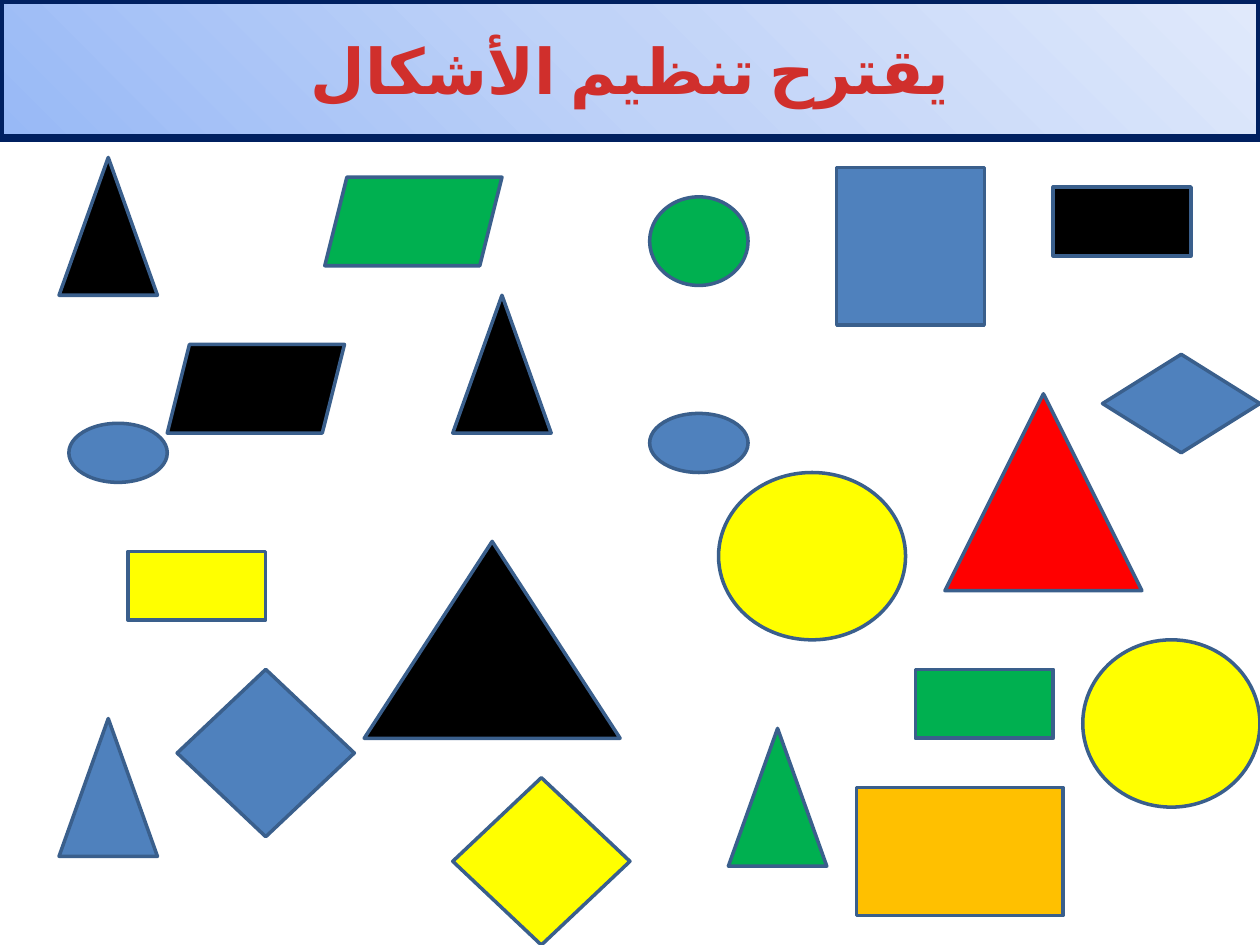
from copy import deepcopy

from lxml import etree
from pptx import Presentation
from pptx.dml.color import RGBColor
from pptx.enum.shapes import MSO_SHAPE
from pptx.enum.text import MSO_ANCHOR, MSO_AUTO_SIZE, PP_ALIGN
from pptx.oxml.ns import qn
from pptx.util import Pt

RECTANGLE = MSO_SHAPE.RECTANGLE
TRIANGLE = MSO_SHAPE.ISOSCELES_TRIANGLE
OVAL = MSO_SHAPE.FLOWCHART_CONNECTOR
DIAMOND = MSO_SHAPE.FLOWCHART_DECISION
PARALLELOGRAM = MSO_SHAPE.PARALLELOGRAM

COLORS = {
    "black": "000000", "blue": "4F81BD", "orange": "FFC000",
    "yellow": "FFFF00", "green": "00B050", "red": "FF0000",
    "outline": "3A5F8C", "navy": "002060", "title": "D02F2C",
    "banner start": "98B9F6", "banner middle": "C0D3F8", "banner end": "E0E9FB",
}

# Content: left, top, width, height in grid units
TITLE = "يقترح تنظيم الأشكال"
FIGURES = {
    RECTANGLE: [
        ("black", 107, 19, 14, 7), ("blue", 85, 17, 15, 16),
        ("orange", 87, 80, 21, 13), ("yellow", 13, 56, 14, 7),
        ("green", 93, 68, 14, 7),
    ],
    TRIANGLE: [
        ("black", 37, 55, 26, 20), ("red", 96, 40, 20, 20),
        ("black", 46, 30, 10, 14), ("black", 6, 16, 10, 14),
        ("green", 74, 74, 10, 14), ("blue", 6, 73, 10, 14),
    ],
    OVAL: [
        ("blue", 66, 42, 10, 6), ("green", 66, 20, 10, 9),
        ("blue", 7, 43, 10, 6), ("yellow", 110, 65, 18, 17),
        ("yellow", 73, 48, 19, 17),
    ],
    DIAMOND: [
        ("blue", 18, 68, 18, 17), ("yellow", 46, 79, 18, 17),
        ("blue", 112, 36, 16, 10),
    ],
    PARALLELOGRAM: [("green", 33, 18, 18, 9), ("black", 17, 35, 18, 9)],
}

SLIDE_W, SLIDE_H = 720, 540
GRID = SLIDE_W / 128
TITLE_BOX = (0, 0, 128, 14)
BANNER_STOPS = [("banner start", 0), ("banner middle", 0.5), ("banner end", 1)]
FRAME_FORMAT = {
    "word_wrap": True, "auto_size": MSO_AUTO_SIZE.NONE,
    "vertical_anchor": MSO_ANCHOR.MIDDLE,
}
FONT_FORMAT = {"name": "Calibri", "size": Pt(36), "bold": True}


def rgb(name):
    return RGBColor.from_string(COLORS[name])


def on_grid(box):
    return [Pt(units * GRID) for units in box]


def set_format(target, values):
    for attribute, value in values.items():
        setattr(target, attribute, value)


def set_outline(shape, color, width):
    shape.line.color.rgb = rgb(color)
    shape.line.width = Pt(width)


prs = Presentation()
prs.slide_width, prs.slide_height = Pt(SLIDE_W), Pt(SLIDE_H)
slide = prs.slides.add_slide(prs.slide_layouts[5])

# Title banner
title = slide.shapes.title
set_format(title, dict(zip(("left", "top", "width", "height"), on_grid(TITLE_BOX))))
title.fill.gradient()
title.fill.gradient_angle = 45
stop_list = next(title.element.iter(qn("a:gsLst")))
stop_list.insert(1, deepcopy(stop_list[0]))
for stop, (color, position) in zip(title.fill.gradient_stops, BANNER_STOPS):
    stop.color.rgb = rgb(color)
    stop.position = position
set_outline(title, "navy", 4.5)
set_format(title.text_frame, FRAME_FORMAT)

# Right-to-left heading with its Arabic font
heading = title.text_frame.paragraphs[0]
heading.text = TITLE
heading.alignment = PP_ALIGN.CENTER
next(heading._p.iter(qn("a:pPr"))).set("rtl", "1")
heading_font = heading.runs[0].font
set_format(heading_font, FONT_FORMAT)
heading_font.color.rgb = rgb("title")
run_format = next(heading._p.iter(qn("a:rPr")))
run_format.set("lang", "ar-SA")
etree.SubElement(run_format, qn("a:cs")).set("typeface", FONT_FORMAT["name"])

# Figures to sort
for kind, figures in FIGURES.items():
    for color, *box in figures:
        figure = slide.shapes.add_shape(kind, *on_grid(box))
        figure.shadow.inherit = False
        figure.fill.solid()
        figure.fill.fore_color.rgb = rgb(color)
        set_outline(figure, "outline", 2)

prs.save("out.pptx")
